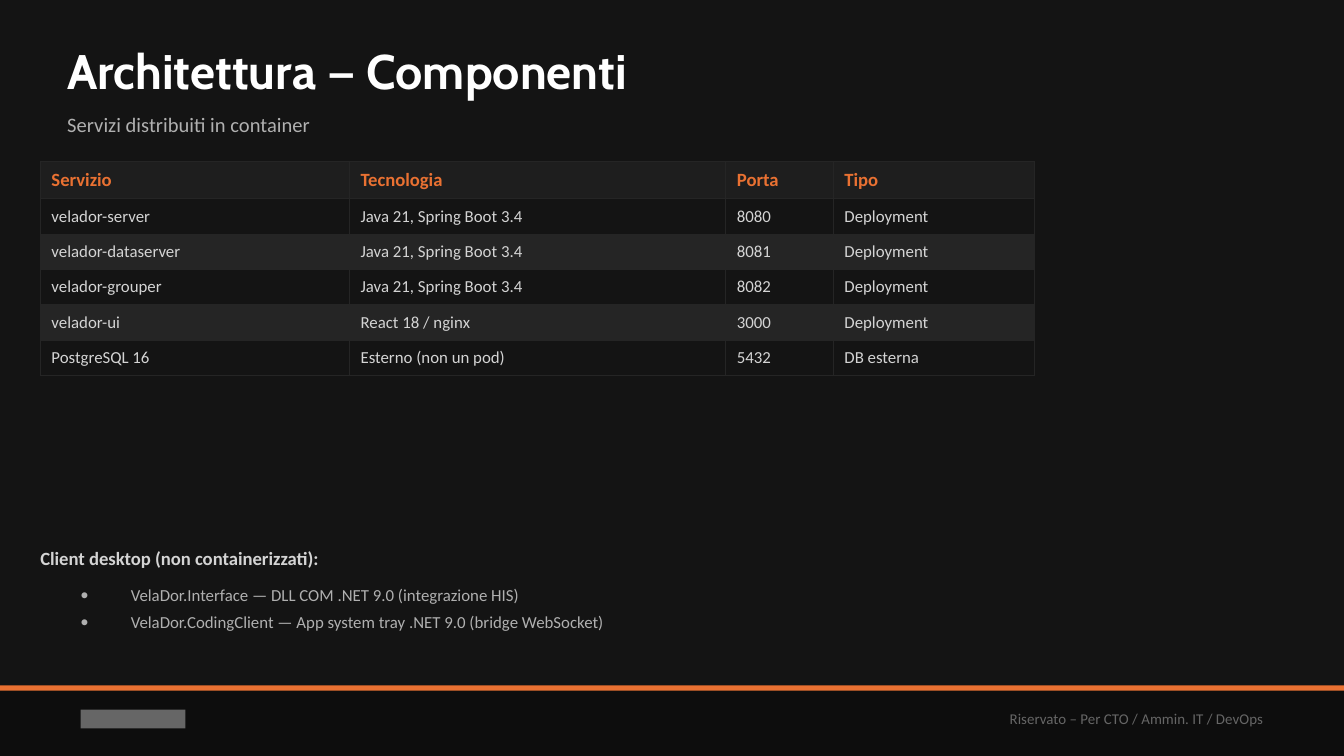
from lxml.etree import SubElement
from pptx import Presentation
from pptx.dml.color import RGBColor
from pptx.enum.shapes import MSO_SHAPE
from pptx.enum.text import MSO_ANCHOR, PP_ALIGN
from pptx.oxml import parse_xml
from pptx.oxml.ns import nsdecls, qn
from pptx.util import Inches, Pt

BACKGROUND = RGBColor(0x14, 0x14, 0x14)
FOOTER = RGBColor(0x0D, 0x0D, 0x0D)
HEADER = RGBColor(0x1E, 0x1E, 0x1E)
STRIPE = RGBColor(0x25, 0x25, 0x25)
ACCENT = RGBColor(0xE9, 0x71, 0x32)
WHITE = RGBColor(0xFF, 0xFF, 0xFF)
LIGHT = RGBColor(0xD4, 0xD4, 0xD4)
MUTED = RGBColor(0xB0, 0xB0, 0xB0)
DIM = RGBColor(0x66, 0x66, 0x66)

SERVICES = [
    ("Servizio", "Tecnologia", "Porta", "Tipo"),
    ("velador-server", "Java 21, Spring Boot 3.4", "8080", "Deployment"),
    ("velador-dataserver", "Java 21, Spring Boot 3.4", "8081", "Deployment"),
    ("velador-grouper", "Java 21, Spring Boot 3.4", "8082", "Deployment"),
    ("velador-ui", "React 18 / nginx", "3000", "Deployment"),
    ("PostgreSQL 16", "Esterno (non un pod)", "5432", "DB esterna"),
]
CLIENTS = [
    "VelaDor.Interface — DLL COM .NET 9.0 (integrazione HIS)",
    "VelaDor.CodingClient — App system tray .NET 9.0 (bridge WebSocket)",
]


def write(paragraph, text, size=9, color=LIGHT, bold=False, font="Calibri", align=PP_ALIGN.LEFT):
    """Add a formatted run to a paragraph."""
    paragraph.alignment = align
    run = paragraph.add_run()
    run.text = text
    run.font.size = Pt(size)
    run.font.name = font
    run.font.bold = bold
    run.font.color.rgb = color


class Deck:
    """Hold the style and current slide on a grid of 100 columns."""

    def __init__(self, width=10, height=5.625, columns=100):
        self.presentation = Presentation()
        self.presentation.slide_width = Inches(width)
        self.presentation.slide_height = Inches(height)
        self.unit = width / columns
        self.slide = self.presentation.slides.add_slide(self.presentation.slide_layouts[5])
        self.slide.background.fill.solid()
        self.slide.background.fill.fore_color.rgb = BACKGROUND

    def grid(self, *cells):
        """Turn grid cells into lengths."""
        return [Inches(cell * self.unit) for cell in cells]

    def frame(self, shape, anchor, inset):
        """Prepare the text frame of a shape and return its first paragraph."""
        frame = shape.text_frame
        frame.word_wrap = True
        frame.vertical_anchor = anchor
        if not inset:
            frame.margin_left = frame.margin_right = 0
            frame.margin_top = frame.margin_bottom = 0
        return frame.paragraphs[0]

    def title(self, area, text):
        """Place and fill the title placeholder."""
        heading = self.slide.shapes.title
        heading.left, heading.top, heading.width, heading.height = self.grid(*area)
        write(self.frame(heading, MSO_ANCHOR.MIDDLE, False), text, size=26,
              color=WHITE, bold=True, font="Cabin")

    def text(self, area, text, inset=False, **style):
        """Add one line of text."""
        box = self.slide.shapes.add_textbox(*self.grid(*area))
        write(self.frame(box, MSO_ANCHOR.MIDDLE, inset), text, **style)

    def bullets(self, area, items, indent=0.375):
        """Add a bulleted list."""
        box = self.slide.shapes.add_textbox(*self.grid(*area))
        paragraph = self.frame(box, MSO_ANCHOR.TOP, True)
        for index, item in enumerate(items):
            if index:
                paragraph = box.text_frame.add_paragraph()
            paragraph.space_after = Pt(4)
            properties = paragraph._p.get_or_add_pPr()
            properties.set("marL", str(Inches(indent)))
            properties.set("indent", str(-Inches(indent)))
            SubElement(properties, qn("a:buFont")).set("typeface", "Calibri")
            SubElement(properties, qn("a:buChar")).set("char", "•")
            write(paragraph, item, color=MUTED)

    def bar(self, area, color):
        """Add a plain filled rectangle."""
        band = self.slide.shapes.add_shape(MSO_SHAPE.RECTANGLE, *self.grid(*area))
        band.shadow.inherit = False
        band.fill.solid()
        band.fill.fore_color.rgb = color
        band.line.fill.background()

    def table(self, corner, widths, heights, rows):
        """Add a striped table with a header row."""
        area = self.grid(*corner, sum(widths), sum(heights))
        table = self.slide.shapes.add_table(len(rows), len(widths), *area).table
        table.horz_banding = False
        for column, width in zip(table.columns, self.grid(*widths)):
            column.width = width
        for row, height in zip(table.rows, self.grid(*heights)):
            row.height = height
        for r, values in enumerate(rows):
            style = dict(size=9) if r else dict(size=10, color=ACCENT, bold=True)
            fill = (BACKGROUND if r % 2 else STRIPE) if r else HEADER
            for c, value in enumerate(values):
                self.cell(table.cell(r, c), value, fill, style)

    def cell(self, cell, value, fill, style):
        """Fill, frame and write one table cell."""
        cell.fill.solid()
        cell.fill.fore_color.rgb = fill
        cell.vertical_anchor = MSO_ANCHOR.MIDDLE
        cell.margin_left = cell.margin_right = Pt(6)
        cell.margin_top = cell.margin_bottom = Pt(4)
        for position, side in enumerate("LRTB"):
            cell._tc.get_or_add_tcPr().insert(position, parse_xml(
                f'<a:ln{side} {nsdecls("a")} w="{Pt(0.5)}"><a:solidFill>'
                f'<a:srgbClr val="{STRIPE}"/></a:solidFill></a:ln{side}>'))
        write(cell.text_frame.paragraphs[0], value, **style)


def main():
    """Build and save the components slide."""
    deck = Deck()
    deck.bar((0, 51, 100, 5.25), FOOTER)
    deck.bar((0, 51, 100, 0.4), ACCENT)
    deck.bar((6, 52.8, 7.8, 1.4), DIM)
    deck.text((55, 51.5, 40, 4), "Riservato – Per CTO / Ammin. IT / DevOps",
              inset=True, size=8, color=DIM, align=PP_ALIGN.RIGHT)
    deck.title((5, 2.5, 90, 5.5), "Architettura — Componenti")
    deck.text((5, 7.5, 90, 3.5), "Servizi distribuiti in container", size=11, color=MUTED)
    deck.table((3, 12), (23, 28, 8, 15), [2.7] + [2.63] * 5, SERVICES)
    deck.text((3, 40, 94, 3), "Client desktop (non containerizzati):", size=10, bold=True)
    deck.bullets((5, 43, 90, 7), CLIENTS)
    deck.presentation.save("out.pptx")


if __name__ == "__main__":
    main()
